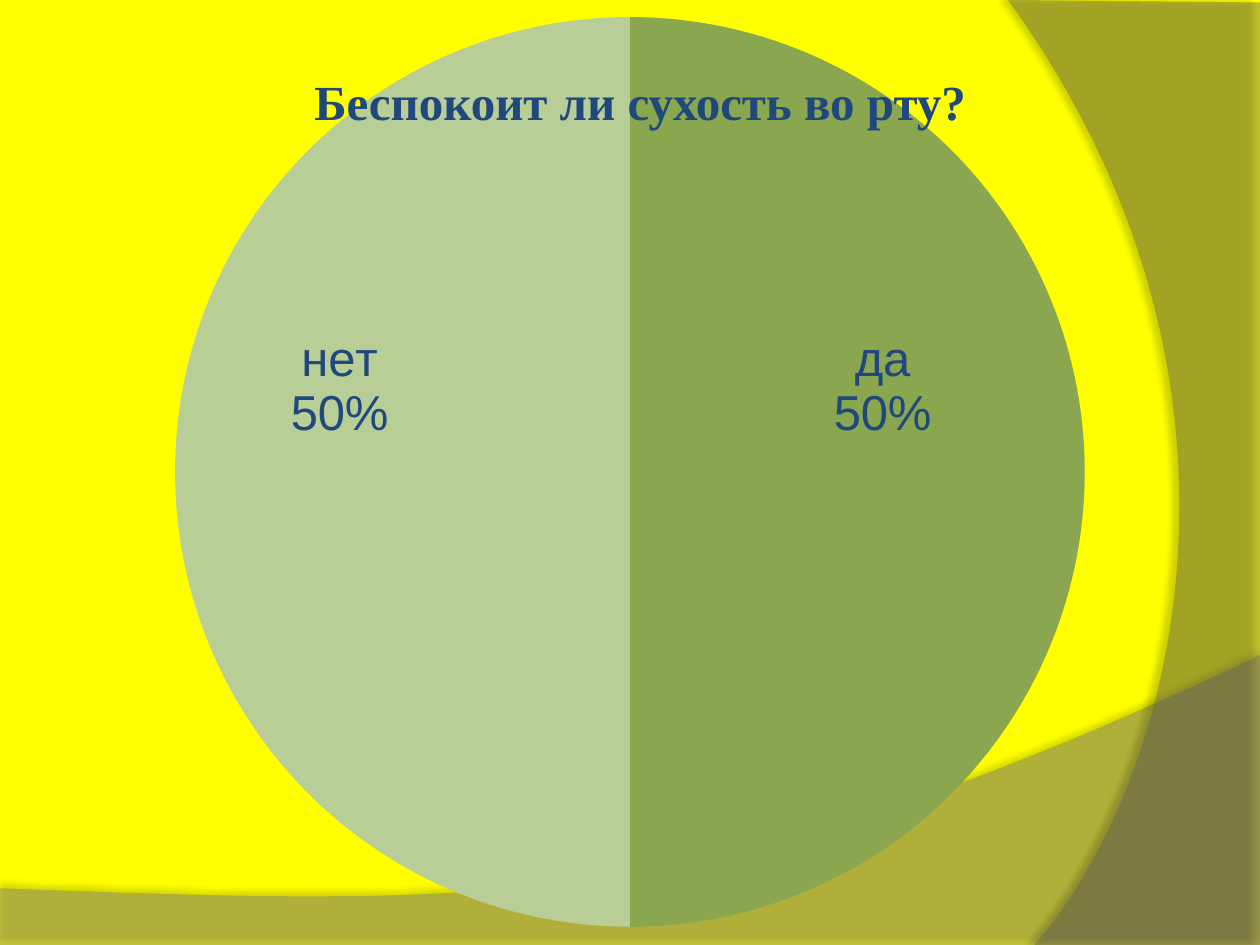
from dataclasses import dataclass

from lxml import etree
from pptx import Presentation
from pptx import util as u
from pptx.chart.data import CategoryChartData
from pptx.dml.color import RGBColor
from pptx.enum import chart as charts
from pptx.enum import text
from pptx.oxml import parse_xml
from pptx.oxml.ns import nsdecls, qn

Point = tuple[float, float]


@dataclass(frozen=True)
class Theme:
    background: str = "FFFF00"
    ink: str = "1F497D"
    title_font: str = "Times New Roman"
    label_font: str = "Arial"
    size: u.Pt = u.Pt(28)


@dataclass(frozen=True)
class Wave:
    before: list[Point]   # straight corners ahead of the curve
    curve: list[Point]    # cubic curve: start, two controls, end
    color: str
    opacity: int          # percent
    shadow_opacity: int   # percent
    shadow_distance: float  # points
    shadow_angle: int     # degrees


@dataclass(frozen=True)
class Answer:
    name: str
    share: int
    color: str
    label_shift: Point    # fractions of the chart, from the slice centre


THEME = Theme()
WAVES = [
    Wave([(0, 7.05), (0, 7.51), (10, 7.51)],
         [(10, 5.2), (5.59, 7.29), (3.91, 7.19), (0, 7.05)],
         "7F7F7F", 45, 35, 3.5, 270),
    Wave([(10, 0.02), (10, 7.5)],
         [(8.21, 7.5), (9.35, 6.19), (10.18, 3), (8, 0)],
         "5E5E5E", 40, 45, 4, 180),
]
ANSWERS = [
    Answer("да", 50, "8AA64F", (0.02, -0.09)),
    Answer("нет", 50, "B9CD96", (-0.05, -0.09)),
]


def rgb(color: str) -> RGBColor:
    return RGBColor.from_string(color)


def curve_points(curve: list[Point], steps: int = 48) -> list[Point]:
    """Points along a cubic Bézier curve."""
    points = []
    for step in range(steps + 1):
        t = step / steps
        weights = ((1 - t) ** 3, 3 * t * (1 - t) ** 2, 3 * t * t * (1 - t), t ** 3)
        points.append(tuple(sum(w * p[axis] for w, p in zip(weights, curve))
                            for axis in (0, 1)))
    return points


def draw_wave(slide, wave: Wave) -> None:
    outline = [(u.Inches(x), u.Inches(y))
               for x, y in wave.before + curve_points(wave.curve)]
    builder = slide.shapes.build_freeform(*outline[0])
    builder.add_line_segments(outline[1:], close=True)
    shape = builder.convert_to_shape()
    shape.fill.solid()
    shape.fill.fore_color.rgb = rgb(wave.color)
    shape.line.fill.background()
    shape.shadow.inherit = False

    # Transparency and soft shadow
    properties = shape._element.spPr
    fill_color = properties.find(qn("a:solidFill")).find(qn("a:srgbClr"))
    etree.SubElement(fill_color, qn("a:alpha"), val=str(wave.opacity * 1000))
    properties.find(qn("a:effectLst")).append(parse_xml(
        f'<a:outerShdw {nsdecls("a")} blurRad="{u.Pt(4)}" '
        f'dist="{u.Pt(wave.shadow_distance)}" dir="{wave.shadow_angle * 60000}" '
        f'algn="ctr" rotWithShape="0"><a:srgbClr val="000000">'
        f'<a:alpha val="{wave.shadow_opacity * 1000}"/></a:srgbClr></a:outerShdw>'))


def manual_layout(settings: dict[str, object]):
    items = "".join(f'<c:{key} val="{value}"/>' for key, value in settings.items())
    return parse_xml(f'<c:layout {nsdecls("c")}><c:manualLayout>{items}'
                     f'</c:manualLayout></c:layout>')


def label_slice(series, index: int, answer: Answer) -> None:
    label = series.points[index].data_label
    label.font.size = THEME.size
    label.font.name = THEME.label_font
    label.font.color.rgb = rgb(THEME.ink)
    label.position = charts.XL_LABEL_POSITION.CENTER

    # Category and percentage on two lines, moved off the slice centre
    element = series._element.xpath(f"c:dLbls/c:dLbl[c:idx/@val='{index}']")[0]
    for tag, shown in (("showVal", 0), ("showCatName", 1), ("showPercent", 1)):
        element.find(qn(f"c:{tag}")).set("val", str(shown))
    etree.SubElement(element, qn("c:separator")).text = "\n"
    x, y = answer.label_shift
    element.find(qn("c:idx")).addnext(manual_layout({"x": x, "y": y}))


def draw_pie(slide, answers: list[Answer], width: int, height: int) -> None:
    data = CategoryChartData()
    data.categories = [answer.name for answer in answers]
    data.add_series("Series 1", [answer.share for answer in answers])
    pie = slide.shapes.add_chart(charts.XL_CHART_TYPE.PIE, 0, 0, width, height, data).chart
    pie.has_title = False
    pie.has_legend = False
    pie.font.name = THEME.label_font
    pie.font.size = u.Pt(10)
    pie.font.color.rgb = rgb(THEME.ink)
    pie.plots[0].vary_by_categories = True

    series = pie.plots[0].series[0]
    for index, answer in enumerate(answers):
        wedge = series.points[index].format
        wedge.fill.solid()
        wedge.fill.fore_color.rgb = rgb(answer.color)
        wedge.line.fill.background()
        label_slice(series, index, answer)

    # Plot area: a centred square 7.22 inches wide
    plot_area = pie._chartSpace.chart.plotArea
    for layout in plot_area.findall(qn("c:layout")):
        plot_area.remove(layout)
    plot_area.insert(0, manual_layout({
        "layoutTarget": "inner", "xMode": "edge", "yMode": "edge",
        "x": 0.139, "y": 0.018, "w": 0.722, "h": 0.963}))


def draw_title(slide, wording: str) -> None:
    title = slide.shapes.add_textbox(
        u.Inches(1.93), u.Inches(0.52), u.Inches(6.3), u.Inches(0.57))
    frame = title.text_frame
    frame.word_wrap = True
    frame.auto_size = text.MSO_AUTO_SIZE.SHAPE_TO_FIT_TEXT
    frame.text = wording
    line = frame.paragraphs[0]
    line.alignment = text.PP_ALIGN.CENTER
    font = line.runs[0].font
    font.name, font.size, font.bold = THEME.title_font, THEME.size, True
    font.color.rgb = rgb(THEME.ink)


def main() -> None:
    deck = Presentation()
    deck.slide_width, deck.slide_height = u.Inches(10), u.Inches(7.5)
    slide = deck.slides.add_slide(deck.slide_layouts[6])

    # Background
    slide.background.fill.solid()
    slide.background.fill.fore_color.rgb = rgb(THEME.background)
    for wave in WAVES:
        draw_wave(slide, wave)

    # Survey question and answers
    draw_pie(slide, ANSWERS, deck.slide_width, deck.slide_height)
    draw_title(slide, "Беспокоит ли сухость во рту?")
    deck.save("out.pptx")


if __name__ == "__main__":
    main()
